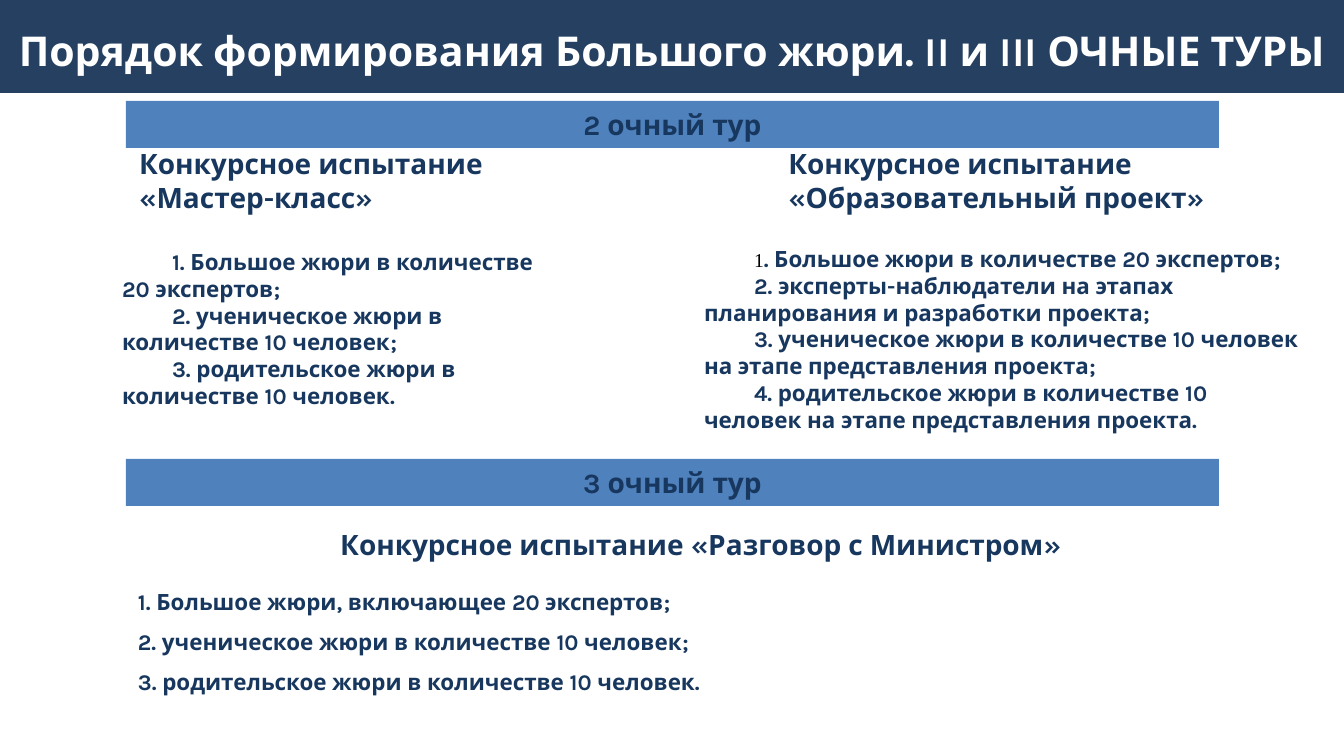
from pptx import Presentation
from pptx import util as u
from pptx.dml.color import RGBColor
from pptx.enum import shapes, text

EMU_PER_PX = 914400 / 134.4

HEADER_BLUE = RGBColor(0x25, 0x40, 0x61)
BAND_BLUE = RGBColor(0x4F, 0x81, 0xBD)
TEXT_BLUE = RGBColor(0x17, 0x37, 0x5E)
WHITE = RGBColor(0xFF, 0xFF, 0xFF)
BLACK = RGBColor(0, 0, 0)

FONT = "Karla"
HEADING_SIZE = 15
LIST_SIZE = 12
FIRST_LINE_INDENT = 50
BAND_LEFT, BAND_WIDTH, BAND_HEIGHT = 126, 1093, 47


def px(length):
    return u.Emu(round(length * EMU_PER_PX))


def add_run(paragraph, words, size, color=TEXT_BLUE, name=FONT, bold=True):
    run = paragraph.add_run()
    run.text = words
    run.font.name = name
    run.font.size = u.Pt(size)
    run.font.bold = bold
    run.font.color.rgb = color


def set_frame(frame, anchor, tight=False, auto_size=text.MSO_AUTO_SIZE.SHAPE_TO_FIT_TEXT):
    frame.word_wrap = True
    frame.auto_size = auto_size
    frame.vertical_anchor = anchor
    if tight:
        frame.margin_left = frame.margin_right = px(10)
        frame.margin_top = frame.margin_bottom = px(5)


def next_paragraph(frame, index):
    return frame.paragraphs[0] if index == 0 else frame.add_paragraph()


def add_rectangle(slide, left, top, width, height, color):
    shape = slide.shapes.add_shape(
        shapes.MSO_SHAPE.RECTANGLE, px(left), px(top), px(width), px(height))
    shape.shadow.inherit = False
    shape.fill.solid()
    shape.fill.fore_color.rgb = color
    shape.line.fill.background()
    return shape


def add_header(slide, words):
    title = slide.shapes.title
    title.left, title.top, title.width, title.height = px(0), px(20), px(1344), px(50)
    frame = title.text_frame
    set_frame(frame, text.MSO_ANCHOR.TOP, tight=True, auto_size=text.MSO_AUTO_SIZE.NONE)
    paragraph = frame.paragraphs[0]
    paragraph.alignment = text.PP_ALIGN.CENTER
    add_run(paragraph, words, 22, WHITE)
    # The header bar goes behind the title
    bar = add_rectangle(slide, 0, -1, 1344, 94, HEADER_BLUE)
    title._element.addprevious(bar._element)


def add_band(slide, top, words):
    band = add_rectangle(slide, BAND_LEFT, top, BAND_WIDTH, BAND_HEIGHT, BAND_BLUE)
    set_frame(band.text_frame, text.MSO_ANCHOR.MIDDLE)
    paragraph = band.text_frame.paragraphs[0]
    paragraph.alignment = text.PP_ALIGN.CENTER
    add_run(paragraph, words, HEADING_SIZE)


def add_heading(slide, left, top, width, height, lines):
    box = slide.shapes.add_textbox(px(left), px(top), px(width), px(height))
    set_frame(box.text_frame, text.MSO_ANCHOR.TOP)
    for index, line in enumerate(lines):
        add_run(next_paragraph(box.text_frame, index), line, HEADING_SIZE)


def add_jury_list(slide, left, top, width, height, items, spacing=1.0, plain_first=False):
    box = slide.shapes.add_textbox(px(left), px(top), px(width), px(height))
    frame = box.text_frame
    set_frame(frame, text.MSO_ANCHOR.MIDDLE, tight=True)
    for index, item in enumerate(items):
        paragraph = next_paragraph(frame, index)
        paragraph.line_spacing = spacing
        properties = paragraph._p.get_or_add_pPr()
        properties.set("marL", "0")
        properties.set("indent", str(px(FIRST_LINE_INDENT)))
        if plain_first and index == 0:
            add_run(paragraph, item[0], 10.5, BLACK, "Times New Roman", False)
            item = item[1:]
        add_run(paragraph, item, LIST_SIZE)


def main():
    presentation = Presentation()
    presentation.slide_width, presentation.slide_height = px(1344), px(756)
    slide = presentation.slides.add_slide(presentation.slide_layouts[5])

    add_header(slide, "Порядок формирования Большого жюри. II и III ОЧНЫЕ ТУРЫ")

    # Second round: two contests side by side
    add_band(slide, 101, "2 очный тур")
    add_heading(slide, 126, 140, 461, 82, ["Конкурсное испытание", "«Мастер-класс»"])
    add_heading(slide, 775, 140, 500, 82,
                ["Конкурсное испытание «Образовательный проект»"])
    add_jury_list(slide, 112, 242, 437, 173, [
        "1. Большое жюри в количестве 20 экспертов;",
        "2. ученическое жюри в количестве 10 человек;",
        "3. родительское жюри в количестве 10 человек.",
    ])
    add_jury_list(slide, 694, 239, 622, 200, [
        "1. Большое жюри в количестве 20 экспертов;",
        "2. эксперты-наблюдатели на этапах планирования и разработки проекта;",
        "3. ученическое жюри в количестве 10 человек на этапе представления проекта;",
        "4. родительское жюри в количестве 10 человек на этапе представления проекта.",
    ], plain_first=True)

    # Third round: one contest
    add_band(slide, 459, "3 очный тур")
    add_heading(slide, 327, 521, 820, 47, ["Конкурсное испытание «Разговор с Министром»"])
    add_jury_list(slide, 78, 569, 1219, 132, [
        "1. Большое жюри, включающее 20 экспертов;",
        "2. ученическое жюри в количестве 10 человек;",
        "3. родительское жюри в количестве 10 человек.",
    ], spacing=1.5)

    presentation.save("out.pptx")


if __name__ == "__main__":
    main()
